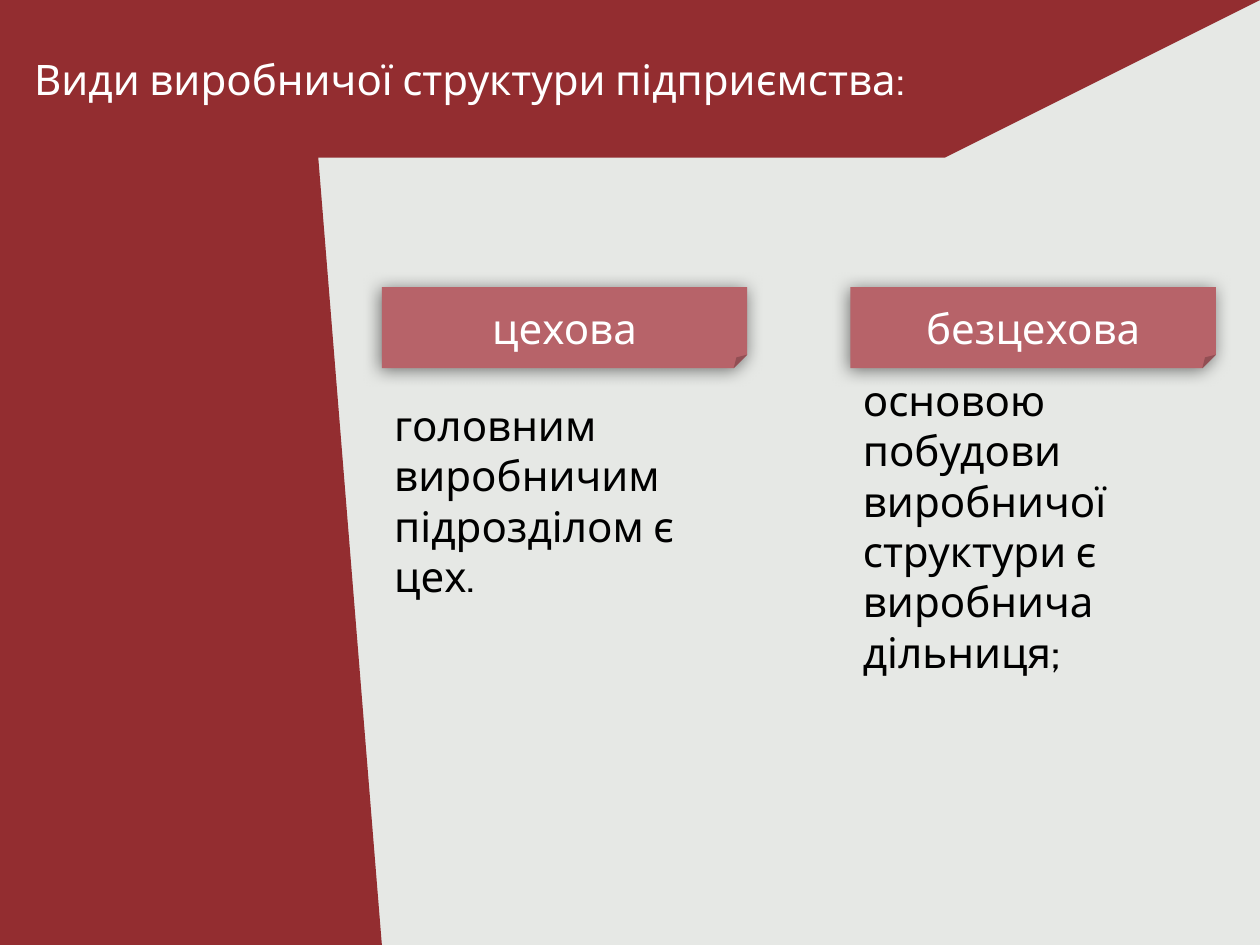
from lxml.etree import SubElement
from pptx import Presentation
from pptx.dml.color import RGBColor
from pptx.enum.shapes import MSO_SHAPE
from pptx.enum.text import MSO_ANCHOR, MSO_AUTO_SIZE, PP_ALIGN
from pptx.oxml.ns import qn
from pptx.util import Pt

TITLE = "Види виробничої структури підприємства:"
KINDS = [  # heading, description, gap below the card, description height
    ("цехова", "головним виробничим підрозділом є цех.", 14.4, 122.4),
    ("безцехова", "основою побудови виробничої структури є виробнича дільниця;",
     0, 180),
]

RED = RGBColor(0x93, 0x2D, 0x30)
ROSE = RGBColor(0xB7, 0x63, 0x69)
PALE = RGBColor(0xE6, 0xE8, 0xE5)
WHITE = RGBColor(0xFF, 0xFF, 0xFF)
BLACK = RGBColor(0, 0, 0)

WIDE, HIGH = 720, 540
BAND, SIDE = 90, 218.2
LEFT, STEP, TOP = 218.2, 267.8, 164
CARD_W, CARD_H = 208.8, 46.4


def add_form(kind, x, y, w, h, fill, turn=0):
    form = slide.shapes.add_shape(kind, Pt(x), Pt(y), Pt(w), Pt(h))
    form.shadow.inherit = False
    form.fill.solid()
    form.fill.fore_color.rgb = fill
    form.line.fill.background()
    form.rotation = turn
    return form


def add_shade(form):
    """Give the shape a soft outer shadow."""
    effects = form._element.spPr.find(qn("a:effectLst"))
    shade = SubElement(effects, qn("a:outerShdw"), blurRad=str(Pt(10)),
                       dist=str(Pt(1.4)), dir=str(126 * 60000),
                       algn="tl", rotWithShape="0")
    tint = SubElement(shade, qn("a:srgbClr"), val="000000")
    SubElement(tint, qn("a:alpha"), val="50000")


def set_text(box, text, color, align, anchor):
    frame = box.text_frame
    frame.word_wrap = True
    frame.auto_size = MSO_AUTO_SIZE.NONE
    frame.vertical_anchor = anchor
    para = frame.paragraphs[0]
    para.alignment = align
    run = para.add_run()
    run.text = text
    run.font.name = "Cabin"
    run.font.size = Pt(24)
    run.font.color.rgb = color


def add_text(x, y, w, h, *style):
    box = slide.shapes.add_textbox(Pt(x), Pt(y), Pt(w), Pt(h))
    set_text(box, *style)


deck = Presentation()
deck.slide_width, deck.slide_height = Pt(WIDE), Pt(HIGH)
slide = deck.slides.add_slide(deck.slide_layouts[5])
slide.background.fill.solid()
slide.background.fill.fore_color.rgb = PALE

band = add_form(MSO_SHAPE.TRAPEZOID, 0, 0, WIDE, BAND, RED, turn=180)
band.adjustments[0] = 2
# A quarter turn swaps width and height around the same centre.
add_form(MSO_SHAPE.FLOWCHART_MANUAL_INPUT, (SIDE - HIGH) / 2,
         (HIGH - SIDE) / 2, HIGH, SIDE, RED, turn=90)

title = slide.shapes.title
title.left, title.top, title.width, title.height = 0, 0, Pt(536.4), Pt(BAND)
set_text(title, TITLE, WHITE, PP_ALIGN.CENTER, MSO_ANCHOR.MIDDLE)
slide.shapes._spTree.append(title._element)  # in front of the red forms

for i, (head, body, gap, tall) in enumerate(KINDS):
    x = LEFT + i * STEP
    card = add_form(MSO_SHAPE.FOLDED_CORNER, x, TOP, CARD_W, CARD_H, ROSE)
    add_shade(card)
    add_text(x, TOP + CARD_H + gap, CARD_W, tall,
             body, BLACK, PP_ALIGN.LEFT, MSO_ANCHOR.TOP)
    add_text(x, TOP, CARD_W, CARD_H,
             head, WHITE, PP_ALIGN.CENTER, MSO_ANCHOR.MIDDLE)

deck.save("out.pptx")
